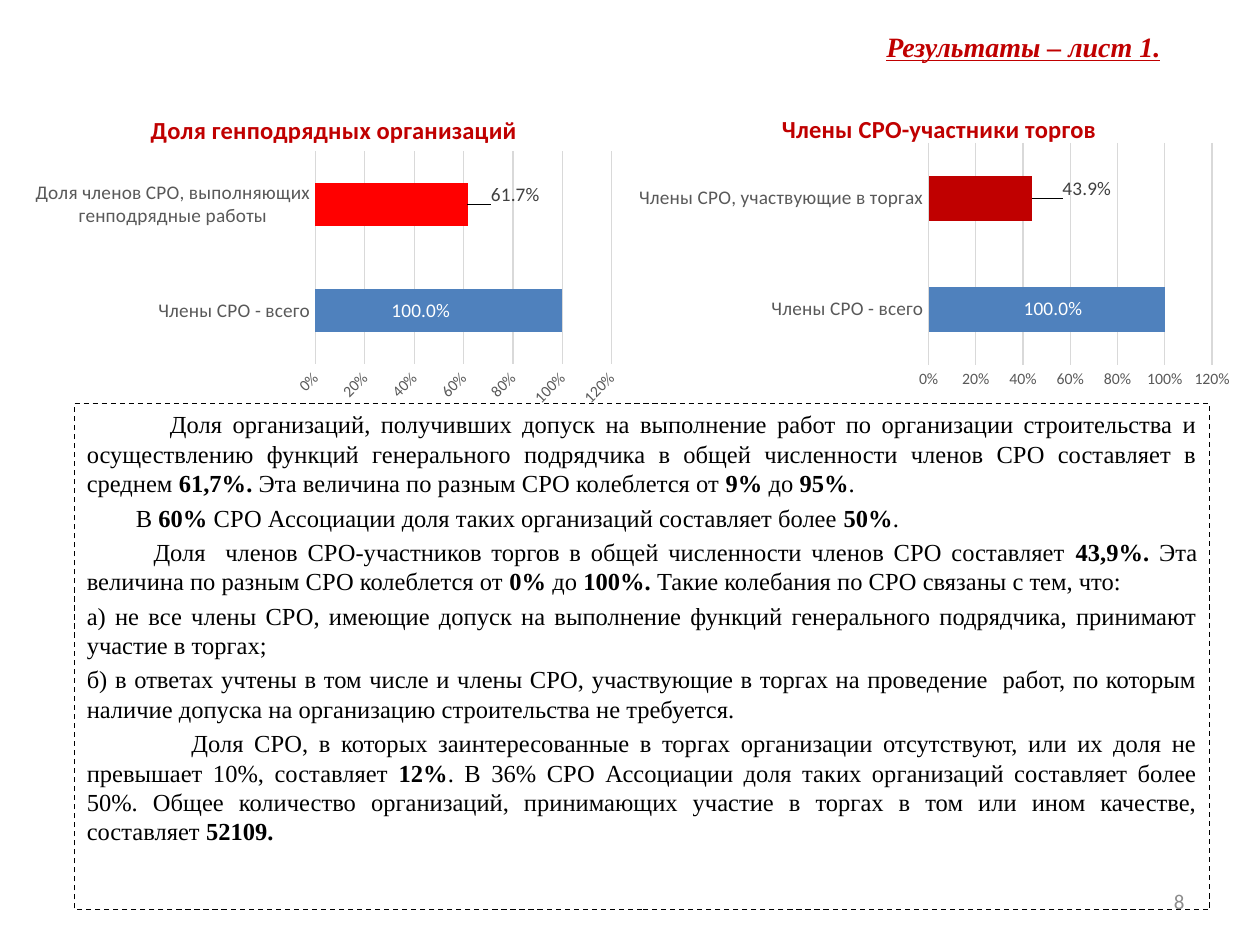
from lxml import etree
from pptx import Presentation
from pptx.chart.data import CategoryChartData
from pptx.dml.color import RGBColor
from pptx.enum.chart import XL_CHART_TYPE, XL_LABEL_POSITION, XL_TICK_MARK
from pptx.enum.dml import MSO_LINE
from pptx.enum.shapes import MSO_SHAPE
from pptx.enum.text import MSO_ANCHOR, PP_ALIGN
from pptx.oxml import parse_xml
from pptx.oxml.ns import nsdecls, qn
from pptx.util import Inches, Pt

BAR = XL_CHART_TYPE.BAR_CLUSTERED
CENTER, OUTSIDE = XL_LABEL_POSITION.CENTER, XL_LABEL_POSITION.OUTSIDE_END
NO_TICK = XL_TICK_MARK.NONE
DASH = MSO_LINE.DASH
RECT = MSO_SHAPE.RECTANGLE
TOP, MIDDLE = MSO_ANCHOR.TOP, MSO_ANCHOR.MIDDLE
RIGHT, JUSTIFY = PP_ALIGN.RIGHT, PP_ALIGN.JUSTIFY

COLORS = {"black": "000000", "white": "FFFFFF", "dark_red": "C00000", "red": "FF0000",
          "blue": "4F81BD", "axis": "595959", "label": "404040", "grid": "D9D9D9",
          "page": "8C8C8C"}


def style(font, size, color, name="Calibri", bold=False):
    font.name, font.size, font.bold = name, Pt(size), bold
    font.color.rgb = RGBColor.from_string(COLORS[color])


def layout_xml(**values):
    """Manual chart layout from x, y, w, h and mode settings, in schema order."""
    layout = parse_xml(f"<c:layout {nsdecls('c')}><c:manualLayout/></c:layout>")
    for tag, value in values.items():
        etree.SubElement(layout[0], qn(f"c:{tag}")).set("val", str(value))
    return layout


prs = Presentation()
prs.slide_width, prs.slide_height = Inches(10), Inches(7.5)
s = prs.slides.add_slide(prs.slide_layouts[5])

# Title
title = s.shapes.title
title.left, title.top, title.width, title.height = map(Inches, (0.81, 0.21, 8.5, 0.31))
tf = title.text_frame
tf.vertical_anchor = MIDDLE
p = tf.paragraphs[0]
p.alignment = RIGHT
r = p.add_run()
r.text = "Результаты – лист 1."
style(r.font, 16, "dark_red", "Times New Roman", True)
r.font.italic = r.font.underline = True

# Findings: first-line indent, then (text, bold) runs
findings = [
    (0.66, [("Доля организаций, получивших допуск на выполнение работ по организации "
             "строительства и осуществлению функций генерального подрядчика в общей "
             "численности членов СРО составляет в среднем ", False), ("61,7%. ", True),
            ("Эта величина по разным СРО колеблется от ", False), ("9%", True),
            (" до ", False), ("95%", True), (".", False)]),
    (0.39, [("В ", False), ("60%", True),
            (" СРО Ассоциации доля таких организаций составляет более ", False),
            ("50%", True), (".", False)]),
    (0.53, [("Доля  членов СРО-участников торгов в общей численности членов СРО "
             "составляет ", False), ("43,9%. ", True),
            ("Эта величина по разным СРО колеблется от ", False), ("0%", True),
            (" до ", False), ("100%. ", True),
            ("Такие колебания по СРО связаны с тем, что:", False)]),
    (0, [("а) не все члены СРО, имеющие допуск на выполнение функций генерального "
          "подрядчика, принимают участие в торгах;", False)]),
    (0, [("б) в ответах учтены в том числе и члены СРО, участвующие в торгах на "
          "проведение  работ, по которым наличие допуска на организацию строительства "
          "не требуется.", False)]),
    (0.83, [("Доля СРО, в которых заинтересованные в торгах организации отсутствуют, "
             "или их доля не превышает 10%, составляет ", False), ("12%", True),
            (". В 36% СРО Ассоциации доля таких организаций составляет более 50%. Общее "
             "количество организаций, принимающих участие в торгах в том или ином "
             "качестве, составляет ", False), ("52109.", True)]),
]
sp = s.shapes.add_shape(RECT, Inches(0.59), Inches(3.2), Inches(9.01), Inches(4.02))
sp.shadow.inherit = False
sp.fill.background()
sp.line.color.rgb = RGBColor.from_string(COLORS["black"])
sp.line.width, sp.line.dash_style = Pt(0.75), DASH
tf = sp.text_frame
tf.word_wrap, tf.vertical_anchor = True, TOP
for i, (indent, runs) in enumerate(findings):
    p = tf.add_paragraph() if i else tf.paragraphs[0]
    p.alignment, p.space_before = JUSTIFY, Pt(2.8)
    p._p.get_or_add_pPr().set("indent", str(Inches(indent)))
    for text, bold in runs:
        r = p.add_run()
        r.text = text
        style(r.font, 14, "black", "Times New Roman", bold)

# Bar charts; label offsets are fractions of the chart size
charts = [
    {"at": (0.2, 0.68, 4.8, 2.6), "title": "Доля генподрядных организаций",
     "title_at": (0.2, 0.07), "category": "Доля членов СРО, выполняющих генподрядные работы",
     "share": 0.617, "color": "red", "plot": (0.48, 0.2, 0.49, 0.65),
     "offsets": [(-0.03, 0), (0.03, -0.03)], "rotation": -45},
    {"at": (4.92, 0.68, 5, 2.52), "title": "Члены СРО-участники торгов",
     "title_at": (0.25, 0.07), "category": "Члены СРО, участвующие в торгах",
     "share": 0.439, "color": "dark_red", "plot": (0.49, 0.18, 0.45, 0.7),
     "offsets": [(0.01, 0), (0.04, -0.03)], "rotation": 0},
]
for c in charts:
    data = CategoryChartData(number_format="0.0%")
    data.categories = ["Члены СРО - всего", c["category"]]
    data.add_series("Доля", (1, c["share"]))
    chart = s.shapes.add_chart(BAR, *map(Inches, c["at"]), data).chart
    style(chart.font, 10, "black")
    chart.has_legend = False

    # Chart title and plot area
    x, y = c["title_at"]
    r = chart.chart_title.text_frame.paragraphs[0].add_run()
    r.text = c["title"]
    style(r.font, 14, "dark_red", bold=True)
    title_xml = chart.chart_title._element
    for old in title_xml.findall(qn("c:layout")):
        title_xml.remove(old)
    title_xml.find(qn("c:tx")).addnext(layout_xml(xMode="edge", yMode="edge", x=x, y=y))
    x, y, w, h = c["plot"]
    area = chart._chartSpace.chart.plotArea
    for old in area.findall(qn("c:layout")):
        area.remove(old)
    area.insert(0, layout_xml(layoutTarget="inner", xMode="edge", yMode="edge",
                              x=x, y=y, w=w, h=h))

    # Axes
    for axis, size in ((chart.category_axis, 11), (chart.value_axis, 9)):
        axis.major_tick_mark = axis.minor_tick_mark = NO_TICK
        axis.format.line.fill.background()
        style(axis.tick_labels.font, size, "axis")
    axis = chart.value_axis
    axis.minimum_scale, axis.maximum_scale, axis.major_unit = 0, 1.2, 0.2
    axis.tick_labels.number_format = "0%"
    axis.tick_labels.number_format_is_linked = False
    axis._element.find(qn("c:txPr")).find(qn("a:bodyPr")).set("rot", str(c["rotation"] * 60000))
    grid = axis.major_gridlines.format.line
    grid.color.rgb = RGBColor.from_string(COLORS["grid"])
    grid.width = Pt(0.75)

    # Bars and their labels
    plot = chart.plots[0]
    plot.gap_width, plot.vary_by_categories = 150, False
    series = plot.series[0]
    labels = series.data_labels
    labels.show_value = True
    labels.number_format, labels.number_format_is_linked = "0.0%", False
    style(labels.font, 11, "label")
    bars = zip(("blue", c["color"]), ("white", "label"), (CENTER, OUTSIDE), c["offsets"])
    for i, (fill, text_color, position, (dx, dy)) in enumerate(bars):
        point = series.points[i]
        point.format.fill.solid()
        point.format.fill.fore_color.rgb = RGBColor.from_string(COLORS[fill])
        style(point.data_label.font, 11, text_color)
        point.data_label.position = position
        label_xml = labels._element.findall(qn("c:dLbl"))[i]
        label_xml.find(qn("c:idx")).addnext(layout_xml(x=dx, y=dy))

# Page number
tb = s.shapes.add_textbox(Inches(7.17), Inches(6.95), Inches(2.33), Inches(0.4))
tf = tb.text_frame
tf.word_wrap, tf.vertical_anchor = True, MIDDLE
p = tf.paragraphs[0]
p.alignment = RIGHT
r = p.add_run()
r.text = "8"
style(r.font, 12, "page")

prs.save("out.pptx")
